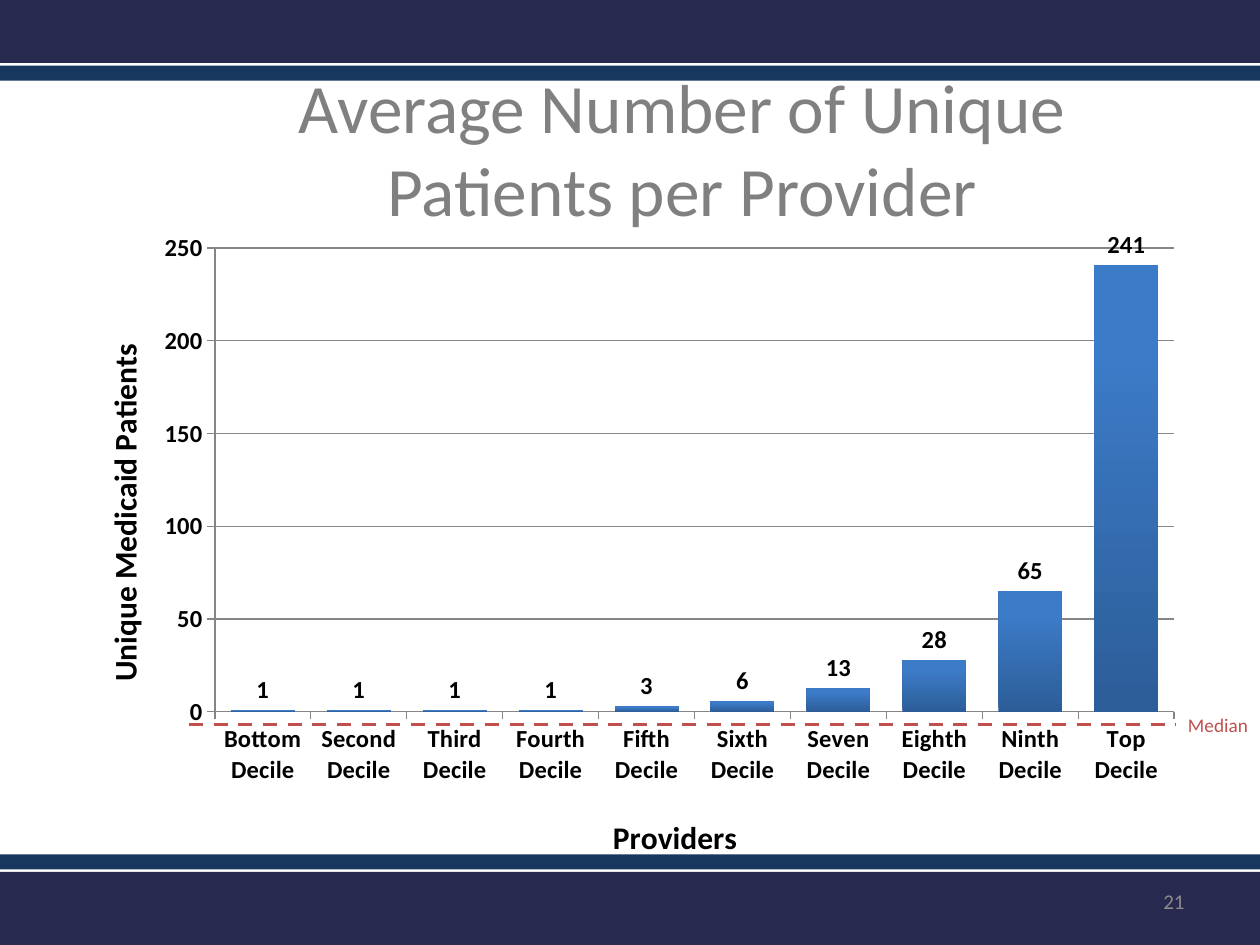
from typing import NamedTuple
from lxml.etree import SubElement
from pptx import Presentation
from pptx.chart.data import CategoryChartData
from pptx.dml.color import RGBColor
from pptx.enum.chart import XL_CHART_TYPE, XL_LABEL_POSITION, XL_TICK_MARK
from pptx.enum.dml import MSO_LINE
from pptx.enum.shapes import MSO_CONNECTOR, MSO_SHAPE
from pptx.enum.text import MSO_ANCHOR, PP_ALIGN
from pptx.oxml import parse_xml
from pptx.oxml.ns import nsdecls, qn
from pptx.util import Inches, Pt

NAVY = RGBColor(0x28, 0x29, 0x4E)
BLUE = RGBColor(0x17, 0x37, 0x5E)
GRAY = RGBColor(0x80, 0x80, 0x80)
PALE = RGBColor(0x8C, 0x8C, 0x8C)
GRID = RGBColor(0x86, 0x86, 0x86)
RED = RGBColor(0xC0, 0x50, 0x4D)
BLACK = RGBColor(0, 0, 0)
DARK = RGBColor(0x2C, 0x5D, 0x98)
LIGHT = RGBColor(0x3C, 0x7B, 0xC7)
FACE = "Calibri"


class Band(NamedTuple):
    top: float
    high: float
    color: RGBColor


class Label(NamedTuple):
    text: str
    left: float
    top: float
    width: float
    high: float
    size: float
    color: RGBColor
    align: PP_ALIGN
    anchor: MSO_ANCHOR


BANDS = [Band(0, 0.5, NAVY), Band(0.52, 0.12, BLUE),
         Band(6.92, 0.58, NAVY), Band(6.78, 0.12, BLUE)]
LABELS = [
    Label("21", 7.17, 6.95, 2.33, 0.4, 12, PALE, PP_ALIGN.RIGHT, MSO_ANCHOR.MIDDLE),
    Label("Median", 9.33, 5.61, 0.75, 0.29, 11, RED, PP_ALIGN.LEFT, MSO_ANCHOR.TOP),
]
RANKS = ["Bottom", "Second", "Third", "Fourth", "Fifth",
         "Sixth", "Seven", "Eighth", "Ninth", "Top"]
COUNTS = [1, 1, 1, 1, 3, 6, 13, 28, 65, 241]


def style(font, size: float, color: RGBColor, bold: bool = False) -> None:
    font.name, font.size, font.bold = FACE, Pt(size), bold
    font.color.rgb = color


def draw_band(slide, band: Band) -> None:
    shape = slide.shapes.add_shape(MSO_SHAPE.RECTANGLE, 0, Inches(band.top),
                                   Inches(10), Inches(band.high))
    shape.shadow.inherit = False
    shape.fill.solid()
    shape.fill.fore_color.rgb = band.color
    shape.line.fill.background()


def draw_label(slide, label: Label) -> None:
    box = slide.shapes.add_textbox(Inches(label.left), Inches(label.top),
                                   Inches(label.width), Inches(label.high))
    frame = box.text_frame
    frame.word_wrap = True
    frame.vertical_anchor = label.anchor
    para = frame.paragraphs[0]
    para.text, para.alignment = label.text, label.align
    style(para.font, label.size, label.color)


def make_layout(inner: bool = False, **parts: float):
    """Return a manual chart layout, in fractions of the chart."""
    rows = {"layoutTarget": "inner"} if inner else {}
    rows |= {"xMode": "edge", "yMode": "edge", **parts}
    body = "".join(f'<c:{key} val="{val}"/>' for key, val in rows.items())
    return parse_xml(f'<c:layout {nsdecls("c")}><c:manualLayout>{body}'
                     '</c:manualLayout></c:layout>')


def put_layout(owner, layout, place: int) -> None:
    for old in owner.findall(qn("c:layout")):
        owner.remove(old)
    owner.insert(place, layout)


def set_axis(axis, text: str, x: float, y: float) -> None:
    axis.major_tick_mark = XL_TICK_MARK.OUTSIDE
    axis.minor_tick_mark = XL_TICK_MARK.NONE
    axis.format.line.color.rgb = GRID
    style(axis.tick_labels.font, 14, BLACK, True)
    para = axis.axis_title.text_frame.paragraphs[0]
    para.text = text
    style(para.font, 18, BLACK, True)
    put_layout(axis.axis_title._element, make_layout(x=x, y=y), 1)


def draw_chart(slide) -> None:
    data = CategoryChartData(number_format="0")
    data.categories = [f"{rank} Decile" for rank in RANKS]
    data.add_series("Series 1", COUNTS)
    chart = slide.shapes.add_chart(XL_CHART_TYPE.COLUMN_CLUSTERED, Inches(0.5),
                                   Inches(1.75), Inches(9), Inches(5.2), data).chart
    chart.has_legend = chart.has_title = False
    style(chart.font, 18, BLACK)
    area = chart._chartSpace.chart.plotArea
    put_layout(area, make_layout(True, x=0.134, y=0.042, w=0.846, h=0.708), 0)

    # Axes
    set_axis(chart.category_axis, "Providers", 0.48, 0.9)
    axis = chart.value_axis
    set_axis(axis, "Unique Medicaid Patients", 0.03, 0.18)
    axis.minimum_scale, axis.maximum_scale, axis.major_unit = 0, 250, 50
    axis.has_major_gridlines = True
    axis.major_gridlines.format.line.color.rgb = GRID

    # Columns and their values
    plot = chart.plots[0]
    plot.gap_width, plot.vary_by_categories = 50, False
    fill = plot.series[0].format.fill
    fill.gradient()
    fill.gradient_angle = 90
    for stop, color, spot in zip(fill.gradient_stops, (DARK, LIGHT), (0, 0.8)):
        stop.color.rgb, stop.position = color, spot
    plot.has_data_labels = True
    tags = plot.data_labels
    tags.show_value = True
    tags.position = XL_LABEL_POSITION.OUTSIDE_END
    tags.number_format, tags.number_format_is_linked = "0", False
    style(tags.font, 14, BLACK, True)


def draw_median(slide) -> None:
    line = slide.shapes.add_connector(MSO_CONNECTOR.STRAIGHT, Inches(1.5),
                                      Inches(5.75), Inches(9.33), Inches(5.75))
    line.line.color.rgb = RED
    line.line.width = Pt(2)
    line.line.dash_style = MSO_LINE.DASH
    SubElement(line._element.spPr, qn("a:effectLst"))


def main() -> None:
    deck = Presentation()
    deck.slide_width, deck.slide_height = Inches(10), Inches(7.5)
    slide = deck.slides.add_slide(deck.slide_layouts[5])

    # Header and footer bands
    for band in BANDS:
        draw_band(slide, band)

    # Title
    title = slide.shapes.title
    title.left, title.top = Inches(1.33), Inches(0.72)
    title.width, title.height = Inches(8.17), Inches(0.9)
    title.text_frame.vertical_anchor = MSO_ANCHOR.MIDDLE
    para = title.text_frame.paragraphs[0]
    para.text = "Average Number of Unique Patients per Provider"
    para.alignment = PP_ALIGN.CENTER
    style(para.font, 39.6, GRAY)

    # Chart, median line and labels
    draw_chart(slide)
    draw_median(slide)
    for label in LABELS:
        draw_label(slide, label)
    deck.save("out.pptx")


if __name__ == "__main__":
    main()
